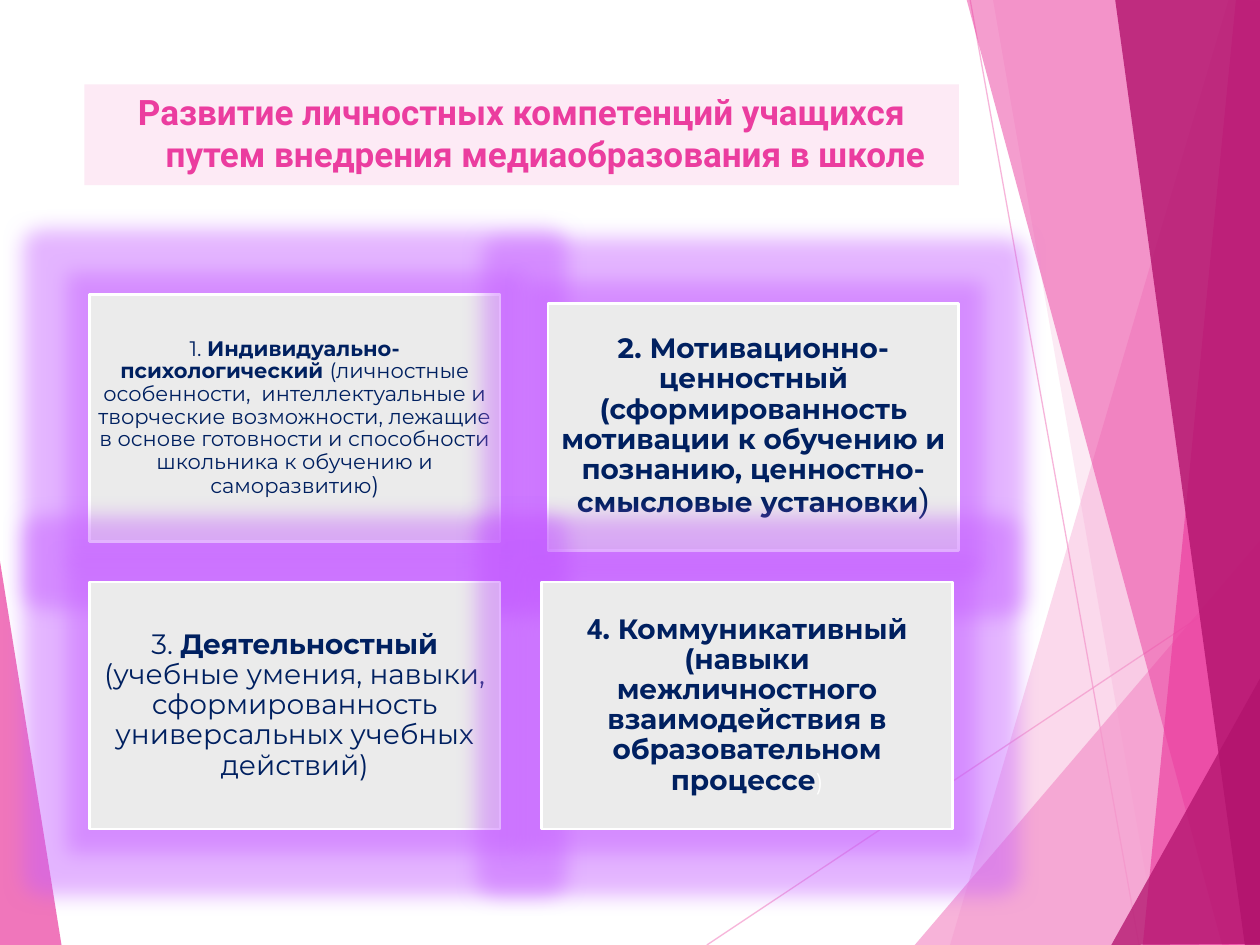
from lxml import etree
from pptx import Presentation
from pptx.dml.color import RGBColor
from pptx.enum.shapes import MSO_CONNECTOR, MSO_SHAPE
from pptx.enum.text import MSO_ANCHOR, MSO_AUTO_SIZE, PP_ALIGN
from pptx.oxml.ns import qn
from pptx.util import Inches, Pt

STRAIGHT = MSO_CONNECTOR.STRAIGHT
RECTANGLE = MSO_SHAPE.RECTANGLE
CENTER = PP_ALIGN.CENTER
TOP, MIDDLE = MSO_ANCHOR.TOP, MSO_ANCHOR.MIDDLE

LIGHT_PINK, PINK, DARK_PINK = "F496CB", "EB3D9F", "B2136D"
TITLE_FILL, BOX_FILL, NAVY, WHITE = "FDEAF5", "EBEBEB", "002060", "FFFFFF"
GLOW = "C45CFF"
BOX_WIDTH, BOX_HEIGHT = 3.26, 1.96

# Background rays: start, end
RAY_LINES = [((5.61, 7.5), (10.01, 4.57)), ((7.7, 0), (9.04, 7.5))]

# Background facets: colour, opacity in percent, corners
FACETS = [
    (LIGHT_PINK, 36, [(9.75, 0), (7.54, 7.5), (10.02, 7.51), (10.01, 0.01)]),
    (LIGHT_PINK, 20, [(7.88, -0.01), (9.19, 7.5), (10.01, 7.5), (10.01, -0.01)]),
    (LIGHT_PINK, 72, [(7.26, 7.5), (10, 4.29), (10.01, 7.5)]),
    (PINK, 50, [(7.67, -0.01), (9.7, 7.5), (10.01, 7.49), (10.01, -0.01)]),
    (PINK, 66, [(9.81, -0.01), (9.07, 7.5), (10.01, 7.5), (10, -0.01)]),
    (DARK_PINK, 80, [(8.85, -0.01), (9.88, 7.5), (10.02, 7.5), (10, -0.01)]),
    (DARK_PINK, 76, [(8.82, 7.5), (10.02, 5.35), (10.02, 7.49)]),
    (PINK, 70, [(-0.01, 4.39), (0.49, 7.51), (-0.01, 7.5)]),
]

# Competence boxes: left, top, inset, runs of text with their format
BOXES = [
    (0.71, 2.34, 0.05, [
        ("1. ", dict(size=12)),
        ("Индивидуально-психологический ", dict(size=12, bold=True)),
        ("(личностные особенности,  интеллектуальные и творческие возможности, "
         "лежащие в основе готовности и способности школьника к обучению и "
         "саморазвитию", dict(size=12)),
        (")", dict(size=13)),
    ]),
    (4.35, 2.41, 0.07, [
        ("2. Мотивационно-ценностный (сформированность мотивации к обучению и "
         "познанию, ценностно-смысловые установки", dict(bold=True)),
        (")", dict(size=18, font="Roboto")),
    ]),
    (0.71, 4.62, 0.07, [
        ("3. ", {}),
        ("Деятельностный ", dict(bold=True)),
        ("(учебные умения, навыки, сформированность универсальных учебных "
         "действий)", {}),
    ]),
    (4.3, 4.62, 0.07, [
        ("4", dict(bold=True, font="Roboto")),
        (". Коммуникативный (навыки межличностного взаимодействия в "
         "образовательном процессе", dict(bold=True)),
        (")", dict(size=13, color=WHITE)),
    ]),
]


def rgb(color):
    return RGBColor.from_string(color)


def set_opacity(color_format_parent, percent):
    color_element = next(color_format_parent.iter(qn("a:srgbClr")))
    etree.SubElement(color_element, qn("a:alpha"), val=str(percent * 1000))


def add_text(paragraph, text, size=16, font="Montserrat", color=NAVY, bold=False):
    run = paragraph.add_run()
    run.text = text
    run.font.size = Pt(size)
    run.font.name = font
    run.font.bold = bold
    run.font.color.rgb = rgb(color)


def add_ray(slide, start, end):
    points = [Inches(value) for value in start + end]
    connector = slide.shapes.add_connector(STRAIGHT, *points)
    connector.line.color.rgb = rgb(LIGHT_PINK)
    connector.line.width = Pt(0.75)
    properties = connector._element.spPr
    set_opacity(properties, 70)
    etree.SubElement(properties, qn("a:effectLst"))


def add_facet(slide, color, opacity, corners):
    points = [(Inches(x), Inches(y)) for x, y in corners]
    builder = slide.shapes.build_freeform(*points[0])
    builder.add_line_segments(points[1:], close=True)
    shape = builder.convert_to_shape()
    shape.shadow.inherit = False
    shape.fill.solid()
    shape.fill.fore_color.rgb = rgb(color)
    set_opacity(shape._element.spPr, opacity)
    shape.line.fill.background()


def add_glow(shape, color, radius, opacity):
    effects = shape._element.spPr.find(qn("a:effectLst"))
    glow = etree.SubElement(effects, qn("a:glow"), rad=str(Inches(radius)))
    etree.SubElement(glow, qn("a:srgbClr"), val=color)
    set_opacity(glow, opacity)


def add_box(slide, left, top, inset, runs):
    shape = slide.shapes.add_shape(RECTANGLE, Inches(left), Inches(top),
                                   Inches(BOX_WIDTH), Inches(BOX_HEIGHT))
    shape.shadow.inherit = False
    shape.fill.solid()
    shape.fill.fore_color.rgb = rgb(BOX_FILL)
    shape.line.color.rgb = rgb(WHITE)
    shape.line.width = Pt(1.5)
    add_glow(shape, GLOW, 0.35, 45)

    frame = shape.text_frame
    frame.word_wrap = True
    frame.vertical_anchor = MIDDLE
    frame.margin_left = frame.margin_right = Inches(inset)
    frame.margin_top = frame.margin_bottom = Inches(inset)
    paragraph = frame.paragraphs[0]
    paragraph.alignment = CENTER
    paragraph.line_spacing = 0.9
    for text, text_format in runs:
        add_text(paragraph, text, **text_format)


def set_title(slide, text):
    title = slide.shapes.title
    title.left, title.top = Inches(0.67), Inches(0.67)
    title.width, title.height = Inches(6.94), Inches(0.8)
    title.fill.solid()
    title.fill.fore_color.rgb = rgb(TITLE_FILL)
    frame = title.text_frame
    frame.word_wrap = True
    frame.auto_size = MSO_AUTO_SIZE.NONE
    frame.vertical_anchor = TOP
    paragraph = frame.paragraphs[0]
    paragraph.alignment = CENTER
    paragraph.line_spacing = 1.0
    # Hanging indent
    properties = paragraph._p.get_or_add_pPr()
    properties.set("marL", str(Inches(0.38)))
    properties.set("indent", str(Inches(-0.38)))
    add_text(paragraph, text, size=20, font="Roboto", color=PINK, bold=True)


def main():
    presentation = Presentation()
    presentation.slide_width = Inches(10)
    presentation.slide_height = Inches(7.5)
    slide = presentation.slides.add_slide(presentation.slide_layouts[5])

    # Background decoration
    for start, end in RAY_LINES:
        add_ray(slide, start, end)
    for color, opacity, corners in FACETS:
        add_facet(slide, color, opacity, corners)

    # Content
    set_title(slide, "Развитие личностных компетенций учащихся "
                     "путем внедрения медиаобразования в школе")
    for box in BOXES:
        add_box(slide, *box)

    presentation.save("out.pptx")


if __name__ == "__main__":
    main()
